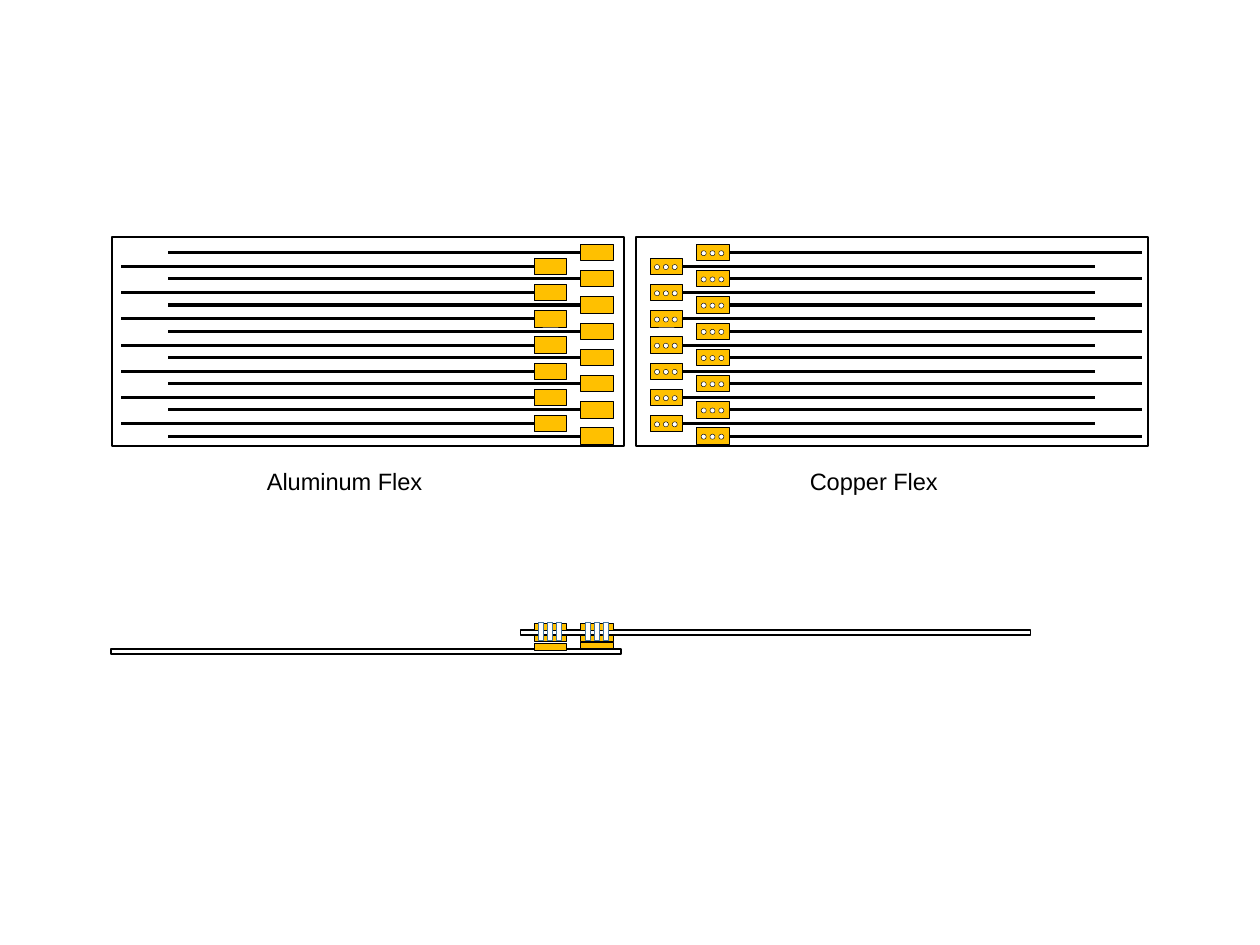
from lxml.etree import SubElement
from pptx import Presentation
from pptx.dml.color import RGBColor
from pptx.enum.shapes import MSO_CONNECTOR, MSO_SHAPE
from pptx.enum.text import MSO_AUTO_SIZE, PP_ALIGN
from pptx.oxml.ns import qn
from pptx.util import Inches, Pt

BLACK = RGBColor(0, 0, 0)
WHITE = RGBColor(255, 255, 255)
GOLD = RGBColor(255, 192, 0)
BLUE = RGBColor(67, 115, 158)

PITCH = 0.208
PAD_W, PAD_H = 0.26, 0.13
HOLE = 0.04
LEFT, RIGHT = 1, 3
OUTER = (1.94, 8)
INNER = (2.05, 7)


def add_box(slide, x, y, w, h, fill, weight, color=BLACK, kind=MSO_SHAPE.RECTANGLE):
    box = slide.shapes.add_shape(kind, Inches(x), Inches(y), Inches(w), Inches(h))
    box.shadow.inherit = False
    if fill is None:
        box.fill.background()
    else:
        box.fill.solid()
        box.fill.fore_color.rgb = fill
    box.line.color.rgb = color
    box.line.width = Pt(weight)
    return box


def add_trace(slide, pad, side, end):
    mid = pad.top + pad.height // 2
    start = pad.left if side == LEFT else pad.left + pad.width
    trace = slide.shapes.add_connector(
        MSO_CONNECTOR.STRAIGHT, start, mid, Inches(end), mid)
    trace.begin_connect(pad, side)
    trace.line.color.rgb = BLACK
    trace.line.width = Pt(1.75)
    SubElement(trace._element.spPr, qn("a:effectLst"))


def hole_spots(x):
    return [x + 0.035 + 0.07 * i for i in range(3)]


def add_column(slide, x, rows, side, end, holes=False):
    top, count = rows
    for row in range(count):
        y = top + row * PITCH
        pad = add_box(slide, x, y, PAD_W, PAD_H, GOLD, 0.5)
        add_trace(slide, pad, side, end)
        if holes:
            for spot in hole_spots(x):
                add_box(slide, spot, y + 0.05, HOLE, HOLE, WHITE, 0.25,
                        kind=MSO_SHAPE.OVAL)


def add_label(slide, x, text):
    box = slide.shapes.add_textbox(Inches(x), Inches(3.66), Inches(1.91), Inches(0.33))
    frame = box.text_frame
    frame.word_wrap = True
    frame.auto_size = MSO_AUTO_SIZE.SHAPE_TO_FIT_TEXT
    line = frame.paragraphs[0]
    line.text = text
    line.alignment = PP_ALIGN.CENTER
    line.font.name = "Arial"
    line.font.size = Pt(13.5)
    line.font.color.rgb = BLACK


def add_side(slide):
    add_box(slide, 0.88, 5.15, 4.05, 0.04, WHITE, 1)
    add_box(slide, 4.13, 5, 4.05, 0.04, WHITE, 1)
    for x, base in ((4.24, 5.11), (4.61, 5.1)):
        for y in (base, 5.04, 4.95):
            add_box(slide, x, y, PAD_W, 0.05, GOLD, 0.5)
        for spot in hole_spots(x):
            add_box(slide, spot, 4.94, HOLE, 0.14, WHITE, 0.25, BLUE)


def main():
    deck = Presentation()
    deck.slide_width, deck.slide_height = Inches(10), Inches(7.5)
    slide = deck.slides.add_slide(deck.slide_layouts[6])
    for x in (0.89, 5.05):
        add_box(slide, x, 1.88, 4.06, 1.66, None, 1.25)
    add_column(slide, 4.24, INNER, LEFT, 0.96)
    add_column(slide, 4.61, OUTER, LEFT, 1.33)
    add_column(slide, 5.16, INNER, RIGHT, 8.69, holes=True)
    add_column(slide, 5.53, OUTER, RIGHT, 9.06, holes=True)
    add_label(slide, 1.78, "Aluminum Flex")
    add_label(slide, 5.98, "Copper Flex")
    add_side(slide)
    deck.save("out.pptx")


if __name__ == "__main__":
    main()
